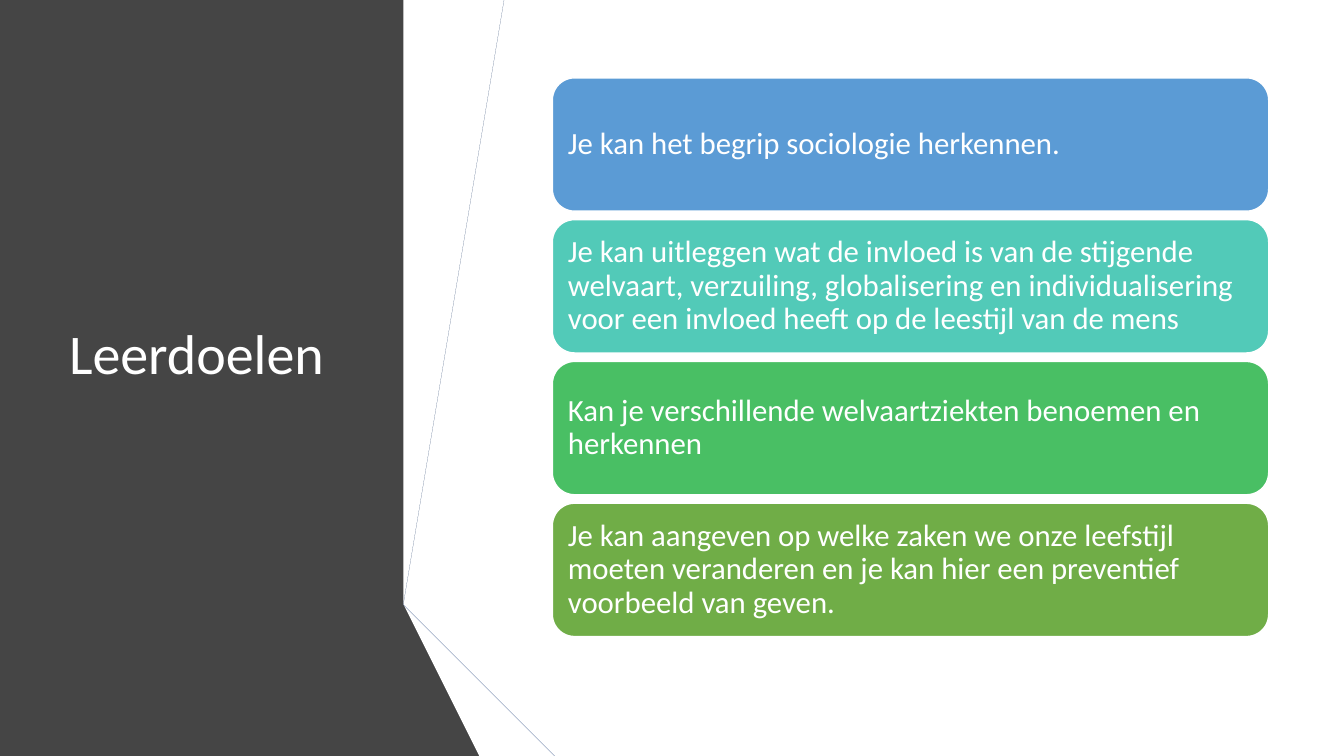
from collections import namedtuple

from pptx import Presentation
from pptx.dml.color import RGBColor
from pptx.enum.shapes import MSO_SHAPE as Preset
from pptx.enum.text import MSO_ANCHOR as Anchor, PP_ALIGN as Align
from pptx.util import Inches, Pt

Box = namedtuple("Box", "left top width height")

WIDTH, HEIGHT = Inches(13.33), Inches(7.5)
GRID_ROWS = 7.5  # the folded panel is drawn on a grid of this many rows
FONT = "Calibri"
WHITE = "FFFFFF"

PANEL = ("454545", [(0, 0), (4.49, 0), (3.56, 5.75), (4.82, 7.5), (0, 7.5)])
RIBBONS = [
    ("4472C4", [(3.96, 5.78), (4.23, 5.83), (5.19, 0), (4.91, 0)]),
    ("595959", [(4.85, 0), (4.57, 0), (3.63, 5.73), (3.9, 5.77)]),
    ("262626", [(3.63, 5.73), (4.91, 7.5), (4.97, 7.5)]),
    ("203864", [(3.96, 5.79), (5.54, 7.5), (5.6, 7.5)]),
    ("2F5597", [(3.96, 5.78), (5.6, 7.5), (6.29, 7.5), (4.23, 5.83)]),
    ("404040", [(3.63, 5.73), (4.97, 7.5), (5.48, 7.5), (3.95, 5.83), (3.9, 5.77)]),
]
GOALS = [
    ("5B9BD5", "Je kan het begrip sociologie herkennen."),
    ("52CAB8", "Je kan uitleggen wat de invloed is van de stijgende welvaart, "
               "verzuiling, globalisering en individualisering voor een invloed "
               "heeft op de leestijl van de mens"),
    ("49BF64", "Kan je verschillende welvaartziekten benoemen en herkennen"),
    ("70AD47", "Je kan aangeven op welke zaken we onze leefstijl moeten veranderen "
               "en je kan hier een preventief voorbeeld van geven."),
]


def color(hex_string):
    return RGBColor.from_string(hex_string)


def share_of_slide(left, top, width, height):
    return Box(int(left * WIDTH), int(top * HEIGHT), int(width * WIDTH), int(height * HEIGHT))


def paint(shape, fill, line=None):
    shape.shadow.inherit = False
    shape.fill.solid()
    shape.fill.fore_color.rgb = color(fill)
    if line:
        shape.line.color.rgb = color(line)
        shape.line.width = Pt(1)
    else:
        shape.line.fill.background()


def write(shape, text, size, inset=0.1, ink=WHITE):
    frame = shape.text_frame
    frame.word_wrap = True
    frame.vertical_anchor = Anchor.MIDDLE
    frame.margin_left = frame.margin_right = Inches(inset)
    frame.margin_top = frame.margin_bottom = Inches(inset)
    paragraph = frame.paragraphs[0]
    paragraph.alignment = Align.LEFT
    paragraph.line_spacing = 0.9
    run = paragraph.add_run()
    run.text = text
    run.font.name = FONT
    run.font.size = Pt(size)
    run.font.color.rgb = color(ink)


def add_folded_panel(slide, box):
    unit = box.height / GRID_ROWS
    for fill, points in [PANEL, *RIBBONS]:
        start, *others = points
        builder = slide.shapes.build_freeform(*start, scale=unit)
        builder.add_line_segments(others, close=True)
        paint(builder.convert_to_shape(box.left, box.top), fill)


def add_title(slide, box, text):
    write(slide.shapes.add_textbox(*box), text, size=40)


def add_goals(slide, box, goals, gap_share=0.06):
    """Stack one card per goal; the gap is a share of the pitch between cards."""
    pitch = box.height / (len(goals) - gap_share)
    height = int(pitch * (1 - gap_share))
    for row, (fill, text) in enumerate(goals):
        top = int(box.top + row * pitch)
        card = slide.shapes.add_shape(Preset.ROUNDED_RECTANGLE, box.left, top, box.width, height)
        paint(card, fill, line=WHITE)
        write(card, text, size=22, inset=0.09)


def main():
    presentation = Presentation()
    presentation.slide_width, presentation.slide_height = WIDTH, HEIGHT
    slide = presentation.slides.add_slide(presentation.slide_layouts[6])
    add_folded_panel(slide, Box(0, 0, WIDTH, HEIGHT))
    add_title(slide, share_of_slide(0.044, 0.1, 0.228, 0.744), "Leerdoelen")
    add_goals(slide, share_of_slide(0.411, 0.103, 0.533, 0.739), GOALS)
    presentation.save("out.pptx")


if __name__ == "__main__":
    main()
